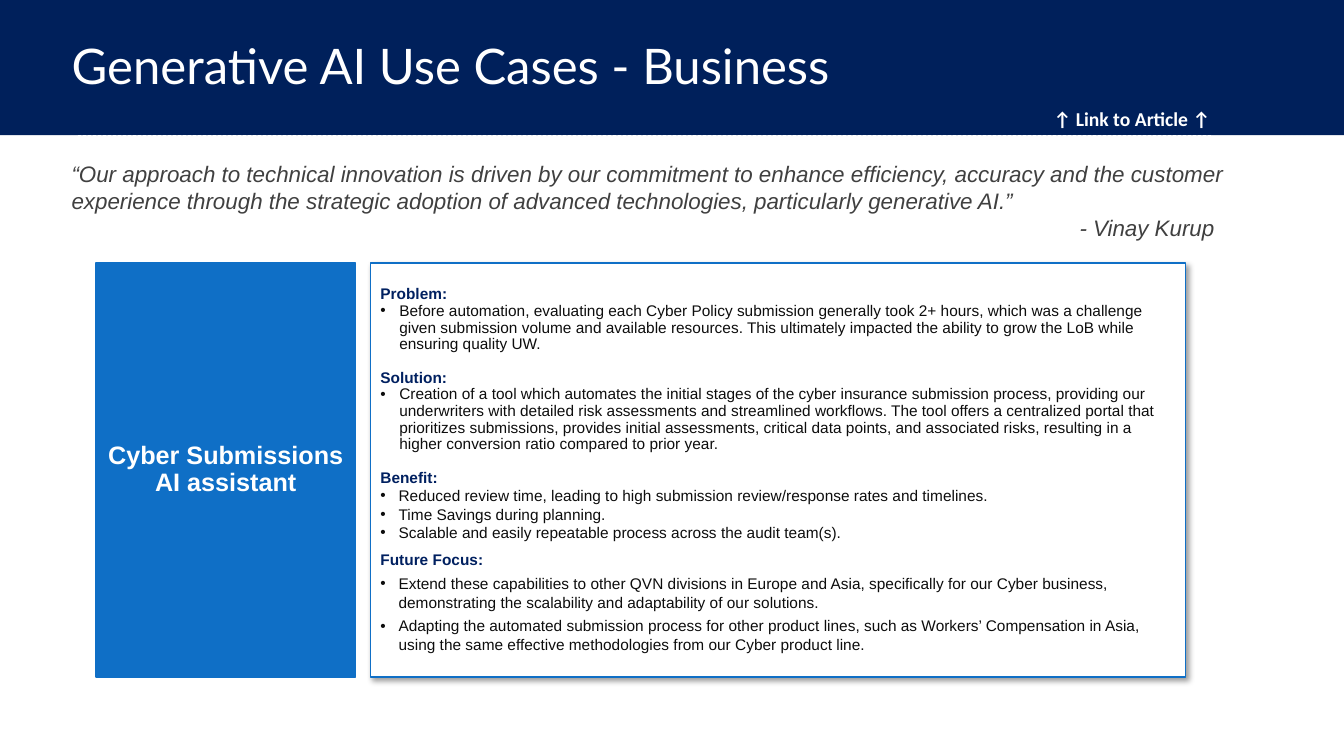
from lxml import etree
from pptx import Presentation
from pptx.dml.color import RGBColor
from pptx.enum.dml import MSO_LINE
from pptx.enum.shapes import MSO_CONNECTOR, MSO_SHAPE
from pptx.enum.text import MSO_ANCHOR, MSO_AUTO_SIZE, PP_ALIGN
from pptx.oxml.ns import qn
from pptx.util import Pt

RECTANGLE = MSO_SHAPE.RECTANGLE
STRAIGHT = MSO_CONNECTOR.STRAIGHT
DASH = MSO_LINE.DASH
TOP, MIDDLE = MSO_ANCHOR.TOP, MSO_ANCHOR.MIDDLE
NO_FIT = MSO_AUTO_SIZE.NONE
LEFT, CENTER = PP_ALIGN.LEFT, PP_ALIGN.CENTER

COLORS = {
    "navy": "00205B", "heading": "002060", "blue": "0F6FC6", "white": "FFFFFF",
    "ink": "0D0D0D", "quote": "404040", "shadow": "000000",
}
HEADING_FONT = {"name": "Arial", "size": Pt(11), "bold": True}
BULLET_FONT = {"name": "Arial", "size": Pt(11), "bold": False}
QUOTE_FONT = {"name": "Arial", "size": Pt(16), "italic": True}

TITLE = "Generative AI Use Cases - Business"
QUOTE = (
    "“Our approach to technical innovation is driven by our commitment to enhance efficiency, "
    "accuracy and the customer experience through the strategic adoption of advanced "
    "technologies, particularly generative AI.”"
)
SECTIONS = [
    {"heading": "Problem:", "gap": 0, "level": 0, "indent": 13.5, "spacing": 0.9, "before": 0,
     "bullets": [
         "Before automation, evaluating each Cyber Policy submission generally took 2+ hours, "
         "which was a challenge given submission volume and available resources. This ultimately "
         "impacted the ability to grow the LoB while ensuring quality UW."]},
    {"heading": "Solution:", "gap": 12, "level": 0, "indent": 13.5, "spacing": 0.9, "before": 0,
     "bullets": [
         "Creation of a tool which automates the initial stages of the cyber insurance submission "
         "process, providing our underwriters with detailed risk assessments and streamlined "
         "workflows. The tool offers a centralized portal that prioritizes submissions, provides "
         "initial assessments, critical data points, and associated risks, resulting in a higher "
         "conversion ratio compared to prior year."]},
    {"heading": "Benefit:", "gap": 12, "level": 1, "indent": 13, "spacing": 1.0, "before": 0,
     "bullets": [
         "Reduced review time, leading to high submission review/response rates and timelines.",
         "Time Savings during planning.",
         "Scalable and easily repeatable process across the audit team(s)."]},
    {"heading": "Future Focus:", "gap": 7.5, "level": 1, "indent": 13, "spacing": 1.0,
     "before": 3.8,
     "bullets": [
         "Extend these capabilities to other QVN divisions in Europe and Asia, specifically for "
         "our Cyber business, demonstrating the scalability and adaptability of our solutions.",
         "Adapting the automated submission process for other product lines, such as Workers’ "
         "Compensation in Asia, using the same effective methodologies from our Cyber product "
         "line."]},
]


def color(name):
    """Return the named colour."""
    return RGBColor.from_string(COLORS[name])


def apply_format(target, values):
    """Set every attribute in values on target."""
    for name, value in values.items():
        setattr(target, name, value)


def place(shape, left, top, width, height):
    """Move and size a shape, in points."""
    apply_format(shape, {"left": Pt(left), "top": Pt(top),
                         "width": Pt(width), "height": Pt(height)})


def prepare_frame(shape, anchor):
    """Return the text frame, wrapped, anchored and with fixed size."""
    frame = shape.text_frame
    apply_format(frame, {"word_wrap": True, "vertical_anchor": anchor, "auto_size": NO_FIT})
    return frame


def write(para, text, ink, font, **layout):
    """Write one formatted run into a paragraph."""
    defaults = {"alignment": LEFT, "line_spacing": 1.0,
                "space_before": Pt(0), "space_after": Pt(0)}
    apply_format(para, {**defaults, **layout})
    span = para.add_run()
    span.text = text
    apply_format(span.font, font)
    span.font.color.rgb = color(ink)


def set_bullet(para, indent, mark=None):
    """Set a hanging indent in points and a bullet mark, or none."""
    settings = para._p.get_or_add_pPr()
    settings.set("marL", str(Pt(indent)))
    settings.set("indent", str(-Pt(indent)))
    if mark:
        etree.SubElement(settings, qn("a:buChar")).set("char", mark)
    else:
        etree.SubElement(settings, qn("a:buNone"))


def paint(shape, fill, line=None):
    """Fill a shape and outline it, or leave it without outline."""
    shape.fill.solid()
    shape.fill.fore_color.rgb = color(fill)
    if line:
        shape.line.color.rgb = color(line)
        shape.line.width = Pt(1)
    else:
        shape.line.fill.background()


def add_block(page, area, fill, line=None):
    """Add a flat rectangle."""
    block = page.shapes.add_shape(RECTANGLE, *map(Pt, area))
    block.shadow.inherit = False
    paint(block, fill, line)
    return block


def add_text(page, area):
    """Add a text box and return its frame."""
    return prepare_frame(page.shapes.add_textbox(*map(Pt, area)), TOP)


def add_shadow(shape):
    """Give a shape a soft shadow to the lower right."""
    effects = etree.SubElement(shape._element.spPr, qn("a:effectLst"))
    shadow = etree.SubElement(effects, qn("a:outerShdw"), blurRad=str(Pt(4)), dist=str(Pt(3)),
                              dir="2700000", algn="tl", rotWithShape="0")
    tint = etree.SubElement(shadow, qn("a:srgbClr"), val=COLORS["shadow"])
    etree.SubElement(tint, qn("a:alpha"), val="40000")


def add_header(page):
    """Build the banner, its dashed rule, the title and the link label."""
    banner = add_block(page, (0, 0, 960, 96.5), "navy")
    rule = page.shapes.add_connector(STRAIGHT, Pt(55.5), Pt(96.5), Pt(866), Pt(96.5))
    apply_format(rule.line, {"width": Pt(0.5), "dash_style": DASH})
    rule.line.color.rgb = color("white")
    etree.SubElement(rule._element.spPr, qn("a:effectLst"))
    for position, shape in enumerate((banner, rule), start=2):
        page.shapes._spTree.insert(position, shape._element)

    title = page.shapes.title
    place(title, 44, 6, 834.5, 86.5)
    write(prepare_frame(title, MIDDLE).paragraphs[0], TITLE, "white",
          {"name": "Lato", "size": Pt(35)}, line_spacing=0.9)
    link = add_text(page, (745.5, 72.5, 132.5, 41))
    write(link.paragraphs[0], "↑ Link to Article ↑", "white",
          {"name": "Calibri", "size": Pt(14), "bold": True})


def add_quote(page):
    """Add the quotation and its speaker."""
    frame = add_text(page, (44, 111, 859.5, 67.5))
    write(frame.paragraphs[0], QUOTE, "quote", QUOTE_FONT)
    speaker = frame.add_paragraph()
    speaker._p.get_or_add_pPr().set("marL", str(Pt(720)))
    write(speaker, "- Vinay Kurup", "quote", QUOTE_FONT)


def add_details(page):
    """Fill the body placeholder with headed bullet lists."""
    body = page.placeholders[1]
    place(body, 264.5, 188, 582.5, 295.5)
    paint(body, "white", "blue")
    add_shadow(body)
    frame = prepare_frame(body, MIDDLE)
    for number, section in enumerate(SECTIONS):
        heading = frame.add_paragraph() if number else frame.paragraphs[0]
        set_bullet(heading, 0)
        write(heading, section["heading"], "heading", HEADING_FONT,
              line_spacing=0.9, space_before=Pt(section["gap"]))
        for text in section["bullets"]:
            item = frame.add_paragraph()
            set_bullet(item, section["indent"], "•")
            write(item, text, "ink", BULLET_FONT, level=section["level"],
                  line_spacing=section["spacing"], space_before=Pt(section["before"]))


def add_topic(page):
    """Add the blue block that names the use case."""
    topic = add_block(page, (68.5, 188, 185.5, 295.5), "blue", "blue")
    write(prepare_frame(topic, MIDDLE).paragraphs[0], "Cyber Submissions AI assistant", "white",
          {"name": "Arial", "size": Pt(18), "bold": True},
          alignment=CENTER, line_spacing=0.9, space_after=Pt(6))


def main():
    """Build the slide and save it."""
    deck = Presentation()
    apply_format(deck, {"slide_width": Pt(960), "slide_height": Pt(540)})
    page = deck.slides.add_slide(deck.slide_layouts[1])
    add_header(page)
    add_details(page)
    add_topic(page)
    add_quote(page)
    deck.save("out.pptx")


if __name__ == "__main__":
    main()
